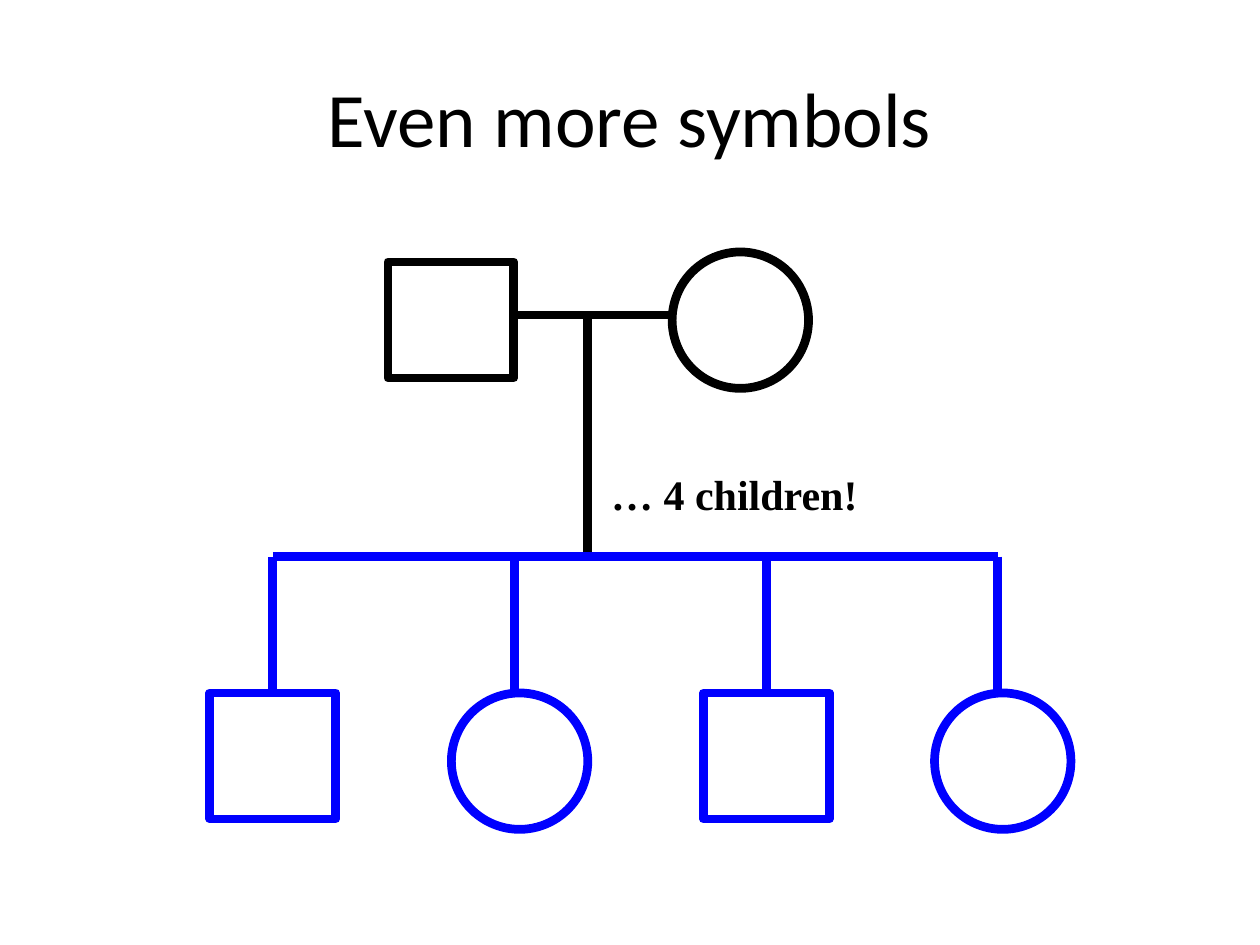
"""Build a slide showing the pedigree symbols for a couple with four children."""
from lxml import etree
from pptx import Presentation
from pptx import util as u
from pptx.dml.color import RGBColor
from pptx.enum import shapes, text
from pptx.oxml.ns import qn

COLORS = {"parent": "000000", "child": "0000FF", "text": "000000"}
LINE_WIDTH = u.Pt(5)
SQUARE, CIRCLE = shapes.MSO_SHAPE.RECTANGLE, shapes.MSO_SHAPE.OVAL

TITLE = "Even more symbols"
NOTE = "… 4 children!"
PARENTS = [
    (SQUARE, 7.82, 5.28, 2.54, 2.34),
    (CIRCLE, 13.55, 5.08, 2.75, 2.75),
]
CHILDREN = [(SQUARE, 5.5), (CIRCLE, 10.37), (SQUARE, 15.45), (CIRCLE, 20.11)]
SIZES = {SQUARE: 2.54, CIRCLE: 2.75}
STEM_OFFSET = 1.27
COUPLE_Y, SIBLING_Y, CHILD_Y = 6.35, 11.22, 13.97
DESCENT_X = 11.85


def add_text(slide, content, box, *, font, size, bold=False,
             align=text.PP_ALIGN.LEFT, anchor=text.MSO_ANCHOR.TOP, before=0):
    frame = slide.shapes.add_textbox(*map(u.Cm, box)).text_frame
    frame.word_wrap = True
    frame.vertical_anchor = anchor
    paragraph = frame.paragraphs[0]
    paragraph.alignment = align
    paragraph.space_before = u.Pt(before)
    run = paragraph.add_run()
    run.text = content
    run.font.name = font
    run.font.size = u.Pt(size)
    run.font.bold = bold
    run.font.color.rgb = RGBColor.from_string(COLORS["text"])


def set_line(shape, color):
    shape.line.color.rgb = RGBColor.from_string(COLORS[color])
    shape.line.width = LINE_WIDTH


def add_person(slide, kind, box, color):
    shape = slide.shapes.add_shape(kind, *map(u.Cm, box))
    shape.shadow.inherit = False
    shape.fill.background()
    set_line(shape, color)


def add_link(slide, start, end, color):
    connector = slide.shapes.add_connector(
        shapes.MSO_CONNECTOR.STRAIGHT, *map(u.Cm, start + end))
    set_line(connector, color)
    etree.SubElement(connector._element.spPr, qn("a:effectLst"))


def main():
    presentation = Presentation()
    presentation.slide_width, presentation.slide_height = u.Cm(25.4), u.Cm(19.05)
    slide = presentation.slides.add_slide(presentation.slide_layouts[6])

    add_text(slide, TITLE, (1.27, 0.76, 22.86, 3.18), font="Calibri", size=44,
             align=text.PP_ALIGN.CENTER, anchor=text.MSO_ANCHOR.MIDDLE)

    for kind, *box in PARENTS:
        add_person(slide, kind, box, "parent")
    father, mother = PARENTS
    add_link(slide, (father[1] + father[3], COUPLE_Y), (mother[1], COUPLE_Y), "parent")
    add_link(slide, (DESCENT_X, COUPLE_Y), (DESCENT_X, SIBLING_Y), "parent")

    add_link(slide, (CHILDREN[0][1], SIBLING_Y), (CHILDREN[-1][1], SIBLING_Y), "child")
    for kind, x in CHILDREN:
        add_link(slide, (x, SIBLING_Y), (x, CHILD_Y), "child")
        size = SIZES[kind]
        add_person(slide, kind, (x - STEM_OFFSET, CHILD_Y, size, size), "child")

    add_text(slide, NOTE, (12.07, 9.31, 11.43, 1.27), font="Times New Roman",
             size=24, bold=True, before=3)
    presentation.save("out.pptx")


if __name__ == "__main__":
    main()
